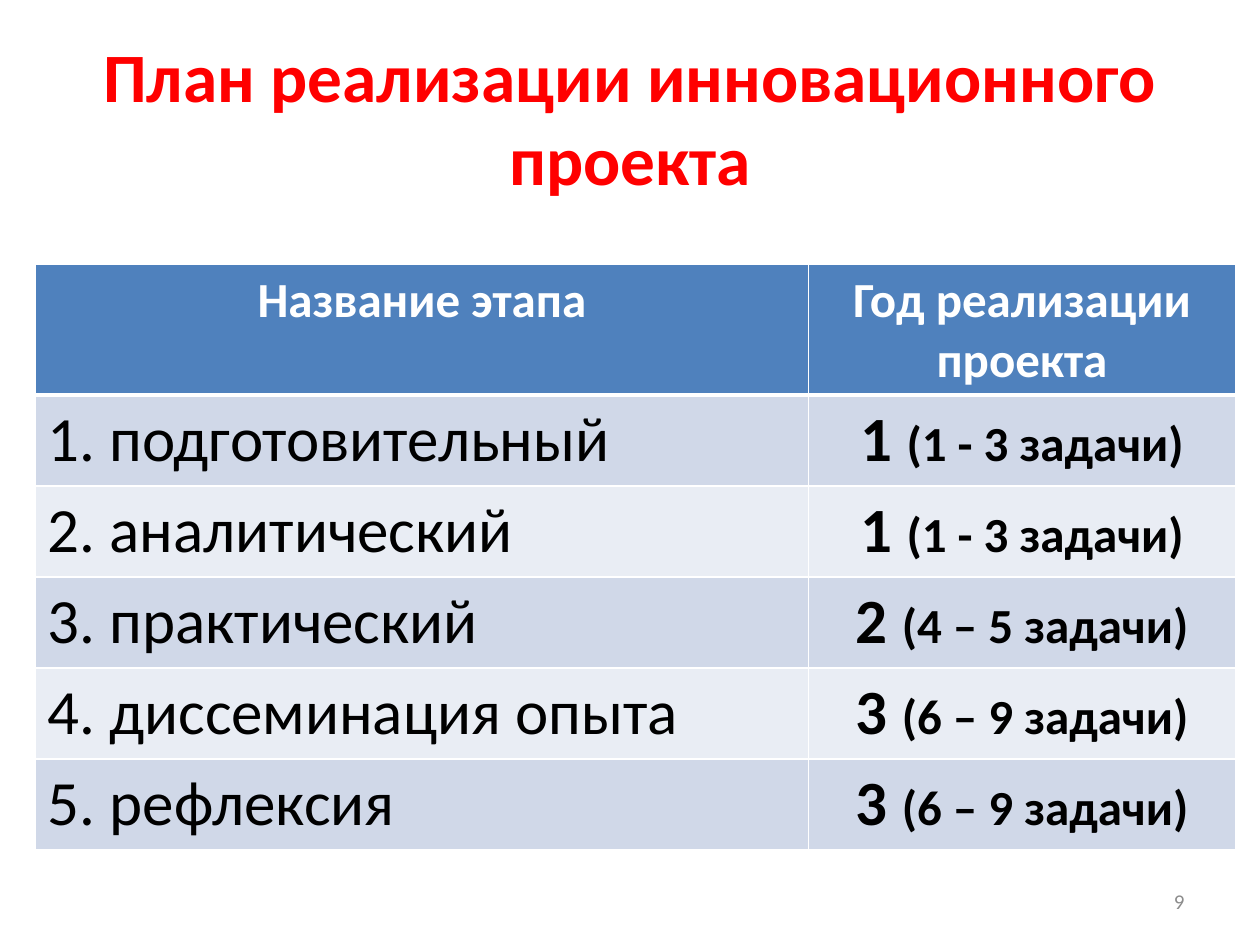
from dataclasses import dataclass

from lxml import etree
from pptx import Presentation
from pptx.dml.color import RGBColor
from pptx.enum import text
from pptx.oxml import ns
from pptx.util import Pt


@dataclass(frozen=True)
class Theme:
    font: str = "Calibri"
    title: str = "FF0000"
    header: str = "4F81BD"
    bands: tuple = ("D0D8E8", "E9EDF4")
    light: str = "FFFFFF"
    dark: str = "000000"
    muted: str = "8C8C8C"
    title_size: float = 39.6
    stage_size: int = 36
    label_size: int = 28
    number_size: int = 12


T = Theme()
AL = text.PP_ALIGN

HEADERS = ("Название этапа", "Год реализации проекта")
STAGES = [
    ("1. подготовительный", "1 ", "(1 - 3 задачи)"),
    ("2. аналитический", "1 ", "(1 - 3 задачи)"),
    ("3. практический", "2 ", "(4 – 5 задачи)"),
    ("4. диссеминация опыта", "3 ", "(6 – 9 задачи)"),
    ("5. рефлексия", "3 ", "(6 – 9 задачи)"),
]


def write(p, runs, color, bold=False, align=AL.LEFT):
    """Fill a paragraph with (text, size) runs of one colour and weight."""
    p.alignment = align
    p.font.name, p.font.bold = T.font, bold
    p.font.color.rgb = RGBColor.from_string(color)
    if len({size for _, size in runs}) == 1:
        p.font.size = Pt(runs[0][1])
    for words, size in runs:
        r = p.add_run()
        r.text = words
        if p.font.size is None:
            r.font.size = Pt(size)


def add_text(s, box, words, size, color, **style):
    tf = s.shapes.add_textbox(*map(Pt, box)).text_frame
    tf.word_wrap = True
    tf.vertical_anchor = text.MSO_ANCHOR.MIDDLE
    write(tf.paragraphs[0], [(words, size)], color, **style)


def set_borders(cell, widths):
    tc_pr = cell._tc.get_or_add_tcPr()
    for side, width in zip("LRTB", widths):
        ln = etree.SubElement(tc_pr, ns.qn(f"a:ln{side}"), w=str(Pt(width)))
        fill = etree.SubElement(ln, ns.qn("a:solidFill"))
        etree.SubElement(fill, ns.qn("a:srgbClr"), val=T.light)


def fill_cell(cell, fill, runs, color, widths=(1, 1, 1, 1), **style):
    set_borders(cell, widths)
    cell.fill.solid()
    cell.fill.fore_color.rgb = RGBColor.from_string(fill)
    write(cell.text_frame.paragraphs[0], runs, color, **style)


def add_plan(s, left, top, col_widths, row_height):
    n_rows = len(STAGES) + 1
    table = s.shapes.add_table(
        n_rows, len(col_widths), Pt(left), Pt(top),
        Pt(sum(col_widths)), Pt(row_height * n_rows)).table
    table.first_row = table.horz_banding = False
    for col, width in zip(table.columns, col_widths):
        col.width = Pt(width)

    # Header row, with a heavier rule below
    for i, words in enumerate(HEADERS):
        fill_cell(table.cell(0, i), T.header, [(words, T.label_size)], T.light,
                  widths=(1, 1, 1, 3), bold=True, align=AL.CENTER)

    # Stage rows in alternating bands
    for i, (stage, year, tasks) in enumerate(STAGES):
        band = T.bands[i % 2]
        top_rule = 3 if i == 0 else 1
        widths = (1, 1, top_rule, 1)
        fill_cell(table.cell(i + 1, 0), band, [(stage, T.stage_size)], T.dark,
                  widths=widths)
        fill_cell(table.cell(i + 1, 1), band,
                  [(year, T.stage_size), (tasks, T.label_size)], T.dark,
                  widths=widths, bold=True, align=AL.CENTER)


def main():
    prs = Presentation()
    prs.slide_width, prs.slide_height = Pt(720), Pt(540)
    s = prs.slides.add_slide(prs.slide_layouts[6])

    # Title
    add_text(s, (36, 21.6, 648, 90), "План реализации инновационного проекта",
             T.title_size, T.title, bold=True, align=AL.CENTER)

    # Slide number
    add_text(s, (516, 500.5, 168, 28.75), "9", T.number_size, T.muted,
             align=AL.RIGHT)

    # Project plan
    add_plan(s, 20, 151.2, (442, 244), 52)

    prs.save("out.pptx")


if __name__ == "__main__":
    main()
